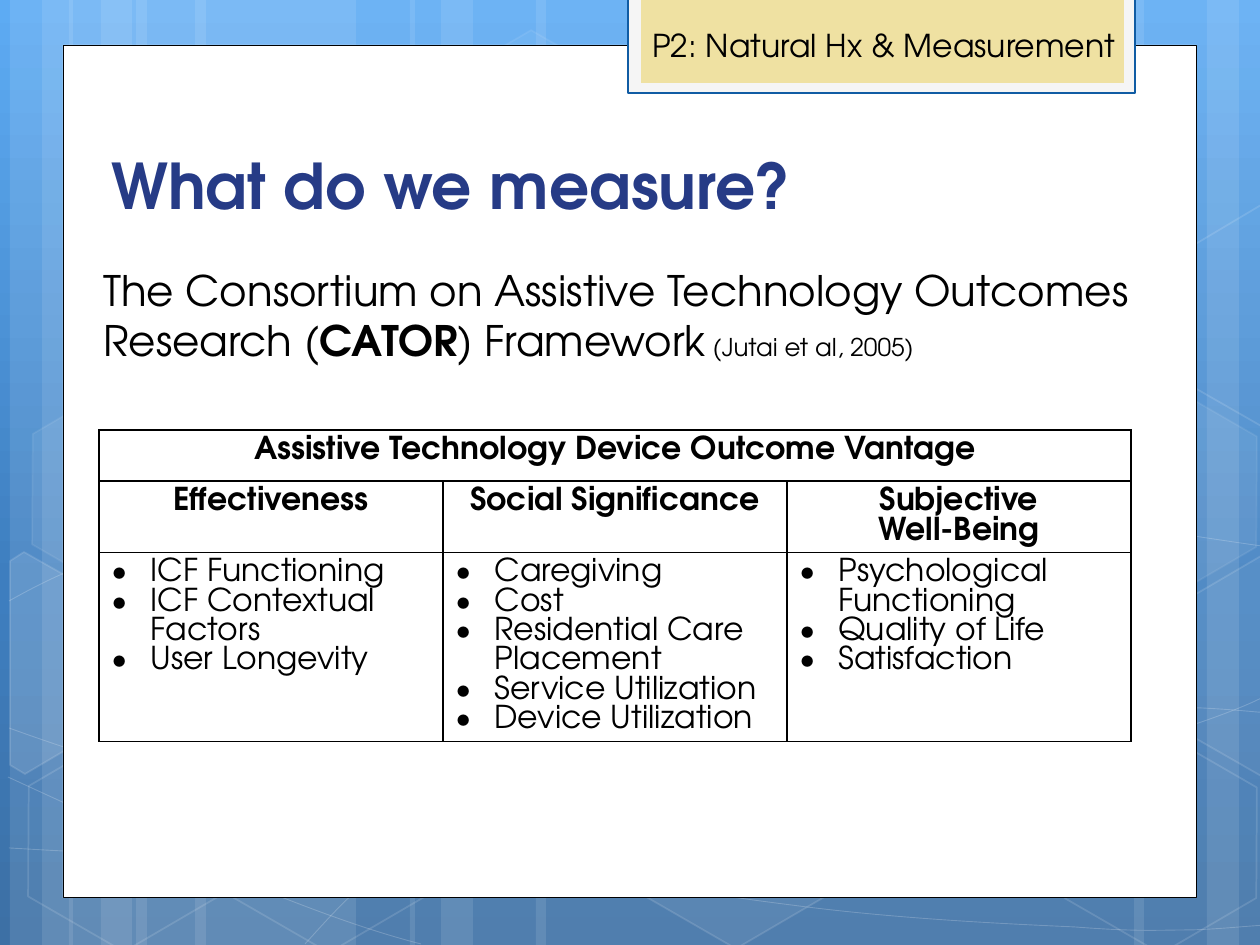
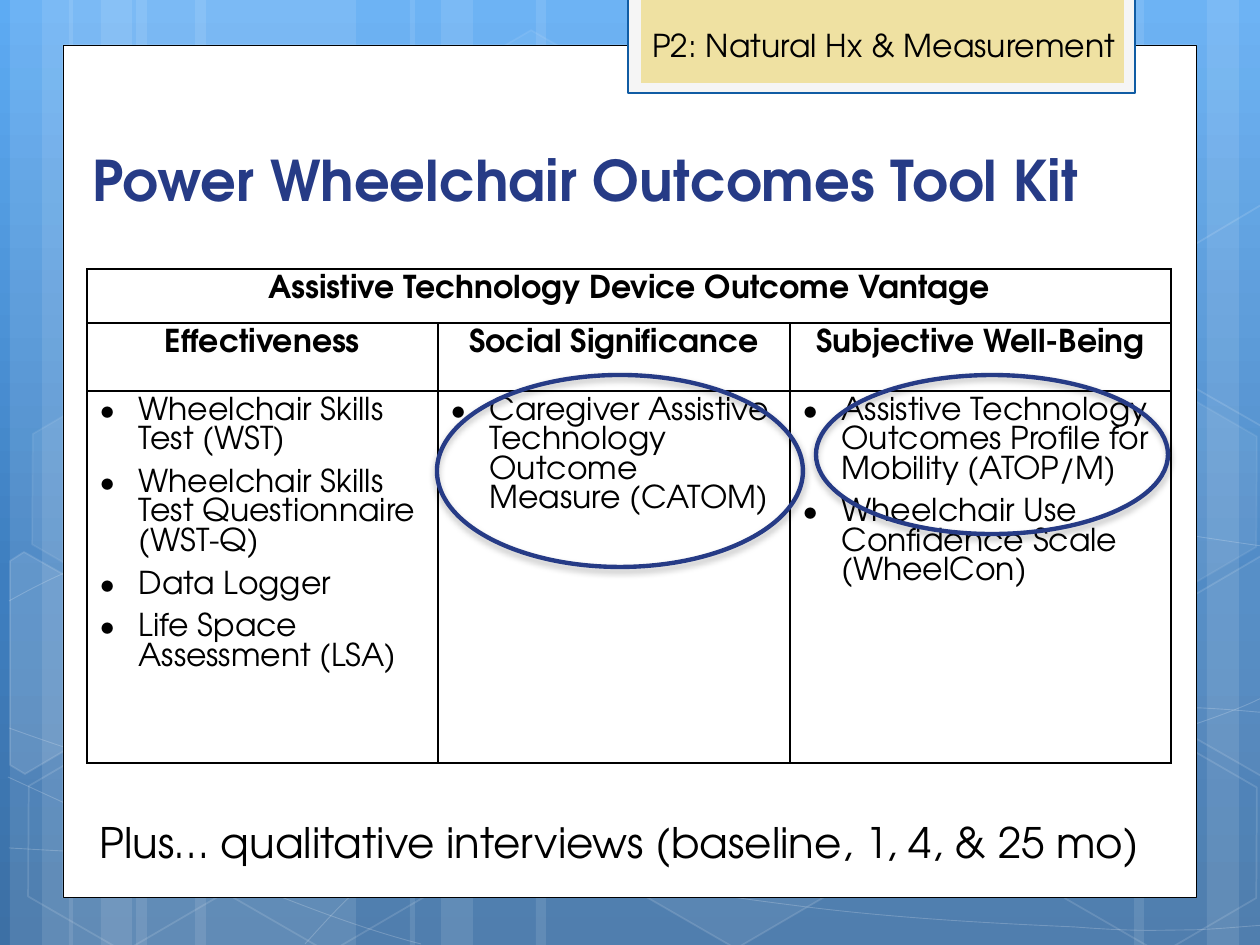
import copy
from lxml import etree
from pptx import Presentation
from pptx import util as u
from pptx.dml.color import RGBColor
from pptx.enum import shapes, text
from pptx.oxml.ns import qn

SCALE = 914400 / 126
FONT = "TeX Gyre Adventor"
COLORS = {"white": "FFFFFF", "black": "000000", "navy": "263B86",
          "frame": "F5F5F5", "frame_edge": "105CA4", "tag": "EFE1A2"}
SKY = [(0, "5DABF3"), (0.62, "3E7EBF"), (1, "3D70A5")]

BANDS = [(136, 220), (10, 63), (42, 105), (195, 220), (69, 63), (101, 105),
         (924, 220), (1207, 63), (1134, 105), (536, 388), (410, 63), (441, 105)]
CURVES = [
    [(9, 848), (77, 852), (145, 856), (239, 854), (334, 853), (451, 851), (577, 838),
     (703, 825), (882, 801), (998, 777), (1113, 753), (1231, 716), (1269, 694)],
    [(9, 601), (45, 581), (82, 562), (152, 543), (224, 524), (326, 496), (437, 488),
     (549, 479), (685, 478), (824, 488), (963, 498), (1193, 537), (1269, 547)],
    [(8, 777), (160, 847), (311, 916), (421, 944)],
    [(9, 728), (48, 742), (88, 756), (161, 776), (234, 795), (344, 827), (450, 848),
     (554, 869), (687, 892), (791, 905), (896, 919), (1008, 924), (1075, 927),
     (1140, 932), (1158, 930), (1191, 930), (1223, 929), (1246, 926), (1269, 925)],
    [(305, 944), (328, 919), (350, 893), (381, 871), (411, 848), (454, 823), (489, 805),
     (524, 788), (546, 780), (592, 767), (638, 754), (722, 737), (766, 728),
     (811, 719), (818, 719), (857, 717), (896, 713), (958, 709), (1000, 708),
     (1045, 707), (1116, 708), (1116, 708), (1116, 708), (1201, 708), (1201, 708),
     (1223, 709), (1245, 711), (1256, 712), (1268, 713), (1264, 712), (1268, 713)],
]
HEXAGONS = [(421, 45, 4, 8), (626, 742, 6, 12), (14, 745, 0, 12), (18, 393, 7, 8),
            (219, 746, 0, 12), (1051, 747, 0, 12), (1051, 396, 7, 8)]
CUT_HEXAGONS = [
    ([(10, 561), (24, 552), (121, 607), (120, 718), (25, 774), (10, 765)], 10),
    ([(1167, 611), (1261, 556), (1271, 562), (1271, 772), (1263, 777), (1167, 722)], 4),
    ([(1167, 261), (1261, 205), (1273, 212), (1271, 422), (1263, 427), (1167, 372)], 0),
]
PAGE = (63, 45, 1134, 853)
TAG_FRAME = (628, -3, 507, 96)
TAG_FILL = (641, -3, 483, 86)
TAG_BOX = (640, 20, 494, 50)
TAG = "P2: Natural Hx & Measurement"

VANTAGE = "Assistive Technology Device Outcome Vantage"
MEASURE = {
    "title": ("What do we measure?", 36, (99, 141, 968, 87)),
    "table": {
        "at": (99, 430), "columns": [344, 344, 344], "rows": [51, 71, 189], "gap": 0,
        "heads": ["Effectiveness", "Social Significance", "Subjective\nWell-Being"],
        "items": [
            ["ICF Functioning", "ICF Contextual Factors", "User Longevity"],
            ["Caregiving", "Cost", "Residential Care Placement",
             "Service Utilization", "Device Utilization"],
            ["Psychological Functioning", "Quality of Life", "Satisfaction"]]},
}
FRAMEWORK = [("The Consortium on Assistive Technology Outcomes Research (", 24, False),
             ("CATOR", 24, True), (") Framework", 24, False),
             (" (Jutai et al, 2005)", 14, False)]
FRAMEWORK_BOX = (91, 258, 1076, 130)
TOOL_KIT = {
    "title": ("Power Wheelchair Outcomes Tool Kit", 32, (80, 119, 1100, 100)),
    "table": {
        "at": (87, 269), "columns": [351, 352, 381], "rows": [54, 68, 372], "gap": 7.75,
        "heads": ["Effectiveness", "Social Significance", "Subjective Well-Being"],
        "items": [
            ["Wheelchair Skills Test (WST)",
             "Wheelchair Skills Test Questionnaire (WST-Q)",
             "Data Logger", "Life Space Assessment (LSA)"],
            ["Caregiver Assistive Technology Outcome Measure (CATOM)"],
            ["Assistive Technology Outcomes Profile for Mobility (ATOP/M)",
             "Wheelchair Use Confidence Scale (WheelCon)"]]},
}
INTERVIEWS = ("Plus… qualitative interviews (baseline, 1, 4, & 25 mo)", 24, False)
INTERVIEWS_BOX = (87, 810, 1092, 63)
HIGHLIGHTS = [(816, 375, 352, 159), (437, 375, 366, 192)]


def px(length):
    return u.Emu(round(length * SCALE))


def place(box):
    return [px(length) for length in box]


def rgb(name):
    return RGBColor.from_string(COLORS[name])


def sub(parent, tag, **attributes):
    return etree.SubElement(parent, qn(tag), {k: str(v) for k, v in attributes.items()})


def fade(parent, opacity):
    sub(parent.find(".//" + qn("a:srgbClr")), "a:alpha", val=opacity * 1000)


def paint(part, fill=None, fill_opacity=100, line=None, width=1, line_opacity=100):
    part.shadow.inherit = False
    properties = part._element.spPr
    if fill and fill_opacity:
        part.fill.solid()
        part.fill.fore_color.rgb = rgb(fill)
        if fill_opacity < 100:
            fade(properties.find(qn("a:solidFill")), fill_opacity)
    else:
        part.fill.background()
    if line:
        part.line.color.rgb = rgb(line)
        part.line.width = u.Pt(width)
        if line_opacity < 100:
            fade(properties.find(qn("a:ln")), line_opacity)
    else:
        part.line.fill.background()
    return part


def add_preset(slide, preset, box, **look):
    return paint(slide.shapes.add_shape(preset, *place(box)), **look)


def add_outline(slide, points, close, **look):
    builder = slide.shapes.build_freeform(*points[0], scale=SCALE)
    builder.add_line_segments(points[1:], close=close)
    return paint(builder.convert_to_shape(), **look)


def bend(outline):
    segments = outline._element.spPr.find(".//" + qn("a:path"))
    controls = segments.findall(qn("a:lnTo"))
    for start in range(0, len(controls), 3):
        curve = sub(segments, "a:cubicBezTo")
        for control in controls[start:start + 3]:
            curve.append(control[0])
            segments.remove(control)


def add_words(slide, box, runs, color="black", wrap=True, anchor=text.MSO_ANCHOR.TOP):
    frame = slide.shapes.add_textbox(*place(box)).text_frame
    frame.word_wrap = wrap
    frame.vertical_anchor = anchor
    for words, size, bold in runs:
        run = frame.paragraphs[0].add_run()
        run.text = words
        style(run, size, bold, color)


def style(run, size, bold, color="black"):
    run.font.name = FONT
    run.font.size = u.Pt(size)
    run.font.bold = bold
    run.font.color.rgb = rgb(color)


def paint_sky(slide):
    fill = slide.background.fill
    fill.gradient()
    fill.gradient_angle = 270
    stops = slide._element.find(".//" + qn("a:gsLst"))
    stops.append(copy.deepcopy(stops[-1]))
    for stop, (position, color) in zip(fill.gradient_stops, SKY):
        stop.position = position
        stop.color.rgb = RGBColor.from_string(color)


def add_backdrop(slide):
    rectangle = shapes.MSO_SHAPE.RECTANGLE
    paint_sky(slide)
    for left, width in BANDS:
        add_preset(slide, rectangle, (left, 0, width, 945), fill="white", fill_opacity=10)
    for controls in CURVES:
        bend(add_outline(slide, controls, False, line="white", width=0.5, line_opacity=20))
    for left, top, inside, edge in HEXAGONS:
        hexagon = add_preset(slide, shapes.MSO_SHAPE.HEXAGON, (left, top, 220, 192),
                             fill="white", fill_opacity=inside,
                             line="white", line_opacity=edge)
        hexagon.adjustments[0] = 0.285
        hexagon.rotation = 30
    for corners, inside in CUT_HEXAGONS:
        add_outline(slide, corners, True, fill="white", fill_opacity=inside,
                    line="white", line_opacity=12)
    add_preset(slide, rectangle, PAGE, fill="white", line="black", width=0.5)
    add_preset(slide, rectangle, TAG_FRAME, fill="frame", line="frame_edge", width=1.25)
    add_preset(slide, rectangle, TAG_FILL, fill="tag")


def fill_cell(cell, words, heading, gap=0):
    cell.text_frame.text = words
    for order, paragraph in enumerate(cell.text_frame.paragraphs):
        paragraph.line_spacing = u.Pt(16.75)
        paragraph.space_before = u.Pt(gap if order else 0)
        for run in paragraph.runs:
            style(run, 18, heading)
        if heading:
            paragraph.alignment = text.PP_ALIGN.CENTER
        else:
            properties = paragraph._p.get_or_add_pPr()
            properties.set("marL", str(px(39)))
            properties.set("indent", str(px(-39)))
            sub(properties, "a:buFont", typeface=FONT)
            sub(properties, "a:buChar", char="•")


def rule_cell(cell):
    cell.fill.background()
    properties = cell._tc.get_or_add_tcPr()
    for order, side in enumerate(("a:lnL", "a:lnR", "a:lnT", "a:lnB")):
        border = sub(properties, side, w=u.Pt(1))
        sub(sub(border, "a:solidFill"), "a:srgbClr", val=COLORS["black"])
        properties.insert(order, border)


def add_vantages(slide, at, columns, rows, gap, heads, items):
    box = (*at, sum(columns), sum(rows))
    table = slide.shapes.add_table(len(rows), len(columns), *place(box)).table
    table.first_row = table.horz_banding = False
    for column, width in zip(table.columns, columns):
        column.width = px(width)
    for row, height in zip(table.rows, rows):
        row.height = px(height)
    for cell in table.iter_cells():
        rule_cell(cell)
    table.cell(0, 0).merge(table.cell(0, len(columns) - 1))
    fill_cell(table.cell(0, 0), VANTAGE, True)
    for order, (head, measures) in enumerate(zip(heads, items)):
        fill_cell(table.cell(1, order), head, True)
        fill_cell(table.cell(2, order), "\n".join(measures), False, gap)


def add_highlight(slide, box):
    ring = add_preset(slide, shapes.MSO_SHAPE.OVAL, box, line="navy", width=2.5)
    shadow = sub(ring._element.spPr.find(qn("a:effectLst")), "a:outerShdw",
                 blurRad=u.Pt(4), dist=u.Pt(2), dir=5400000, rotWithShape=0)
    sub(shadow, "a:srgbClr", val=COLORS["black"])
    fade(shadow, 28)


def start_slide(deck, content):
    slide = deck.slides.add_slide(deck.slide_layouts[6])
    add_backdrop(slide)
    title, size, box = content["title"]
    add_words(slide, box, [(title, size, True)], "navy", anchor=text.MSO_ANCHOR.BOTTOM)
    add_vantages(slide, **content["table"])
    add_words(slide, TAG_BOX, [(TAG, 18, False)], wrap=False)
    return slide


def main():
    deck = Presentation()
    deck.slide_width, deck.slide_height = px(1260), px(945)
    measure = start_slide(deck, MEASURE)
    add_words(measure, FRAMEWORK_BOX, FRAMEWORK)
    tool_kit = start_slide(deck, TOOL_KIT)
    add_words(tool_kit, INTERVIEWS_BOX, [INTERVIEWS])
    for box in HIGHLIGHTS:
        add_highlight(tool_kit, box)
    deck.save("out.pptx")


if __name__ == "__main__":
    main()
